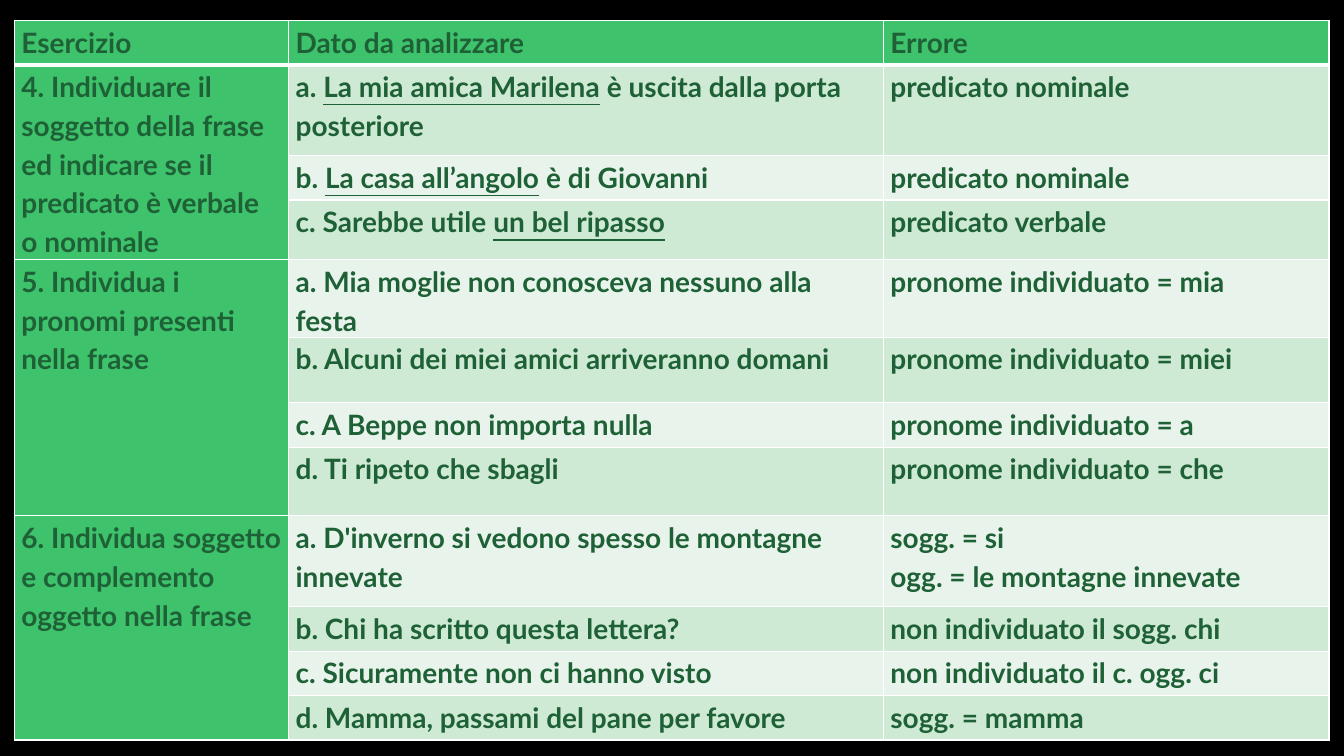
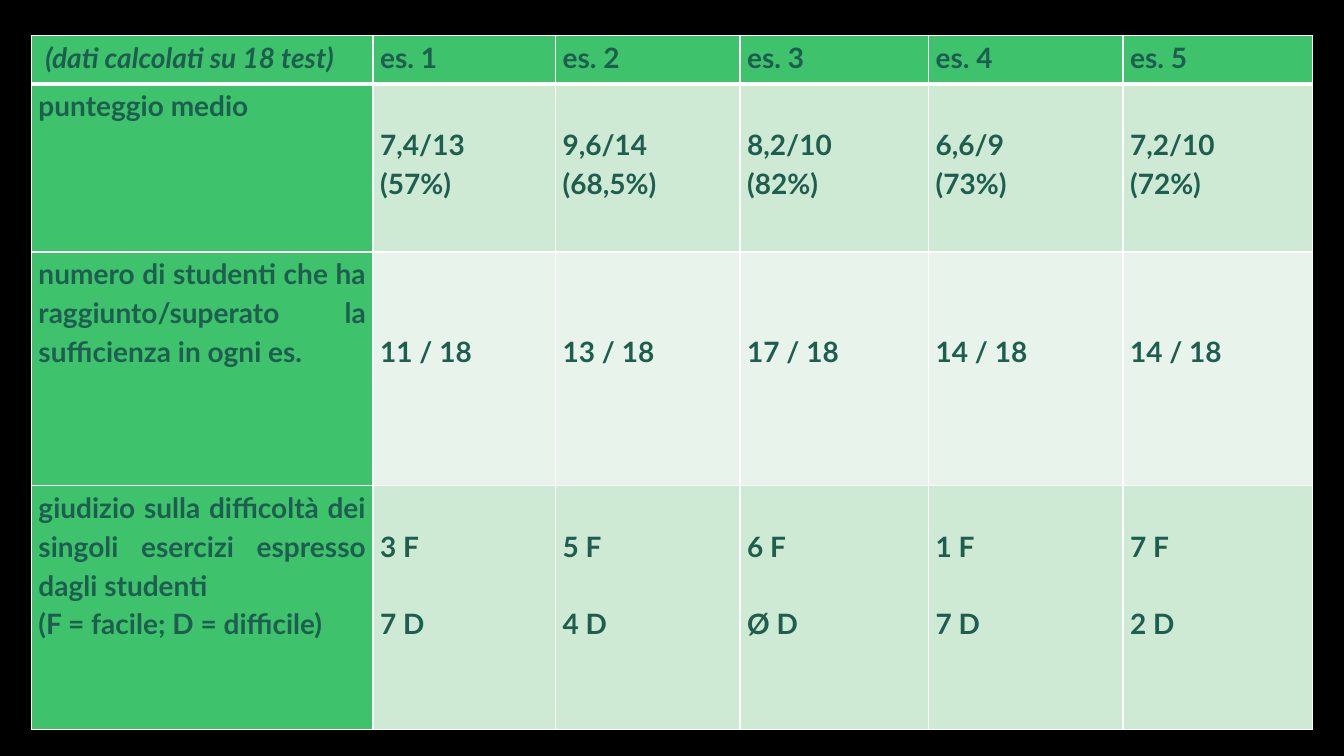
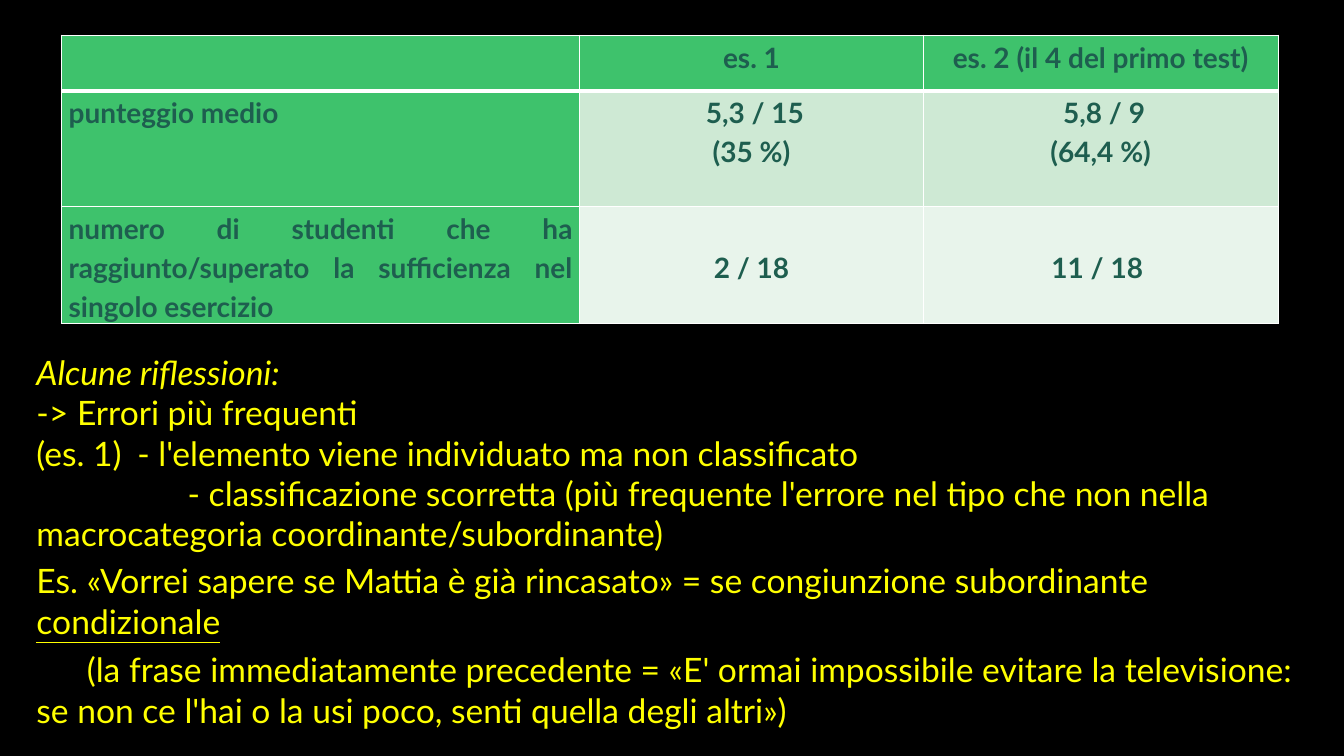
from pptx import Presentation
from pptx.dml.color import RGBColor
from pptx.enum.text import PP_ALIGN
from pptx.oxml.ns import qn
from pptx.util import Cm, Pt
from lxml.etree import SubElement, Element

# Shared style
FONT = "Lato"
BLACK, WHITE, YELLOW = "000000", "FFFFFF", "FFFF00"
HEADER_GREEN, BANDS = "3EC26C", ("E8F4EB", "CEE9D4")
FOREST, TEAL = "1F6136", "1E5E4F"
TEXT_LINE = Cm(0.975)  # height of one table text line
LEFT, JUSTIFY, CENTER = PP_ALIGN.LEFT, PP_ALIGN.JUSTIFY, PP_ALIGN.CENTER

# Content: _underlined_, *italic*; heights and widths in cm
ERROR_HEADER = ["Esercizio", "Dato da analizzare", "Errore"]
ERROR_GROUPS = [
    ("4. Individuare il soggetto della frase ed indicare se il predicato è verbale o nominale", [
        (2.29, "a. _La mia amica Marilena_ è uscita dalla porta posteriore", "predicato nominale"),
        (1.12, "b. _La casa all’angolo_ è di Giovanni", "predicato nominale"),
        (1.5, "c. Sarebbe utile _un bel ripasso_", "predicato verbale"),
    ]),
    ("5. Individua i pronomi presenti nella frase", [
        (1.95, "a. Mia moglie non conosceva nessuno alla festa", "pronome individuato = mia"),
        (1.65, "b. Alcuni dei miei amici arriveranno domani", "pronome individuato = miei"),
        (1.12, "c. A Beppe non importa nulla", "pronome individuato = a"),
        (1.73, "d. Ti ripeto che sbagli", "pronome individuato = che"),
    ]),
    ("6. Individua soggetto e complemento oggetto nella frase", [
        (2.29, "a. D'inverno si vedono spesso le montagne innevate",
         "sogg. = si\nogg. = le montagne innevate"),
        (1.12, "b. Chi ha scritto questa lettera?", "non individuato il sogg. chi"),
        (1.12, "c. Sicuramente non ci hanno visto", "non individuato il c. ogg. ci"),
        (1.12, "d. Mamma, passami del pane per favore", "sogg. = mamma"),
    ]),
]

# Rows: height, lines left free above the values, lines between values, texts
FIRST_TEST = [
    (1.22, 0, 0, [" *(dati calcolati su 18 test)*", "es. 1", "es. 2", "es. 3", "es. 4", "es. 5"]),
    (4.24, 1, 0, ["punteggio medio", "7,4/13\n(57%)", "9,6/14\n(68,5%)", "8,2/10\n(82%)",
                  "6,6/9\n(73%)", "7,2/10\n(72%)"]),
    (5.89, 2, 0, ["numero di studenti che ha raggiunto/superato la sufficienza in ogni es.",
                  "11 / 18", "13 / 18", "17 / 18", "14 / 18", "14 / 18"]),
    (6.15, 1, 1, ["giudizio sulla difficoltà dei singoli esercizi espresso dagli studenti\n"
                  "(F = facile; D = difficile)",
                  "3 F\n7 D", "5 F\n4 D", "6 F\nØ D", "1 F\n7 D", "7 F\n2 D"]),
]
SECOND_TEST = [
    (1.4, 0, 0, ["", "es. 1", "es. 2 (il 4 del primo test)"]),
    (2.92, 0, 0, ["punteggio medio", " 5,3 / 15\n(35 %)", " 5,8 / 9\n(64,4 %)"]),
    (2.92, 1, 0, ["numero di studenti che ha raggiunto/superato la sufficienza nel singolo esercizio",
                  "2 / 18", "11 / 18 "]),
]

# Paragraphs: text, first-line indent, tab stop, space before, space after
REFLECTIONS = [
    ("*Alcune riflessioni:*", 0, 0, 0, 0),
    ("-> Errori più frequenti", 0, 0, 0, 0),
    ("(es. 1)\t- l'elemento viene individuato ma non classificato", 0, 3.81, 0, 0),
    ("- classificazione scorretta (più frequente l'errore nel tipo che non nella "
     "macrocategoria coordinante/subordinante)", 3.81, 0, 0, 0),
    ("Es.\t«Vorrei sapere se Mattia è già rincasato» = se congiunzione subordinante "
     "_condizionale_", 0, 1.27, 4.8, 6),
    ("(la frase immediatamente precedente = «E' ormai impossibile evitare la televisione:",
     1.27, 0, 0, 0),
    ("se non ce l'hai o la usi poco, senti quella degli altri»)", 0, 0, 0, 0),
]


def rgb(value):
    return RGBColor.from_string(value)


def add_marked_runs(paragraph, text):
    """Split the text at its marks and add one run for each piece."""
    mark = "_" if "_" in text else "*"
    for index, piece in enumerate(text.split(mark)):
        if piece:
            run = paragraph.add_run()
            run.text = piece
            if index % 2 and mark == "_":
                run.font.underline = True
            elif index % 2:
                run.font.italic = True


def set_font(paragraph, size, color, bold=False):
    font = paragraph.font
    font.name, font.size, font.bold = FONT, Pt(size), bold
    font.color.rgb = rgb(color)


def set_borders(cell, top, bottom):
    properties = cell._tc.get_or_add_tcPr()
    sides = (("lnL", 1), ("lnR", 1), ("lnT", top), ("lnB", bottom))
    for index, (side, width) in enumerate(sides):
        line = Element(qn("a:" + side), w=str(Pt(width)))
        fill = SubElement(line, qn("a:solidFill"))
        SubElement(fill, qn("a:srgbClr"), val=WHITE)
        properties.insert(index, line)


def fill_cell(cell, text, color, alignment, lead, gap):
    cell.margin_left = cell.margin_right = Cm(0.18)
    cell.margin_top, cell.margin_bottom = int(lead * TEXT_LINE), 0
    for index, line in enumerate(text.split("\n")):
        frame = cell.text_frame
        paragraph = frame.add_paragraph() if index else frame.paragraphs[0]
        paragraph.alignment = alignment
        paragraph.line_spacing = 1.15
        if index and gap:
            paragraph.space_before = int(gap * TEXT_LINE)
        add_marked_runs(paragraph, line)
        set_font(paragraph, 20, color, bold=True)


def add_green_table(slide, left, top, widths, rows, color, label_align, value_align):
    heights = [row[0] for row in rows]
    table = slide.shapes.add_table(len(rows), len(widths), Cm(left), Cm(top),
                                   Cm(sum(widths)), Cm(sum(heights))).table
    for column, width in zip(table.columns, widths):
        column.width = Cm(width)
    for row_index, (height, lead, gap, texts) in enumerate(rows):
        table.rows[row_index].height = Cm(height)
        for column_index, text in enumerate(texts):
            cell = table.cell(row_index, column_index)
            is_label = column_index == 0
            if text is not None:
                fill_cell(cell, text, color, label_align if is_label else value_align,
                          0 if is_label else lead, 0 if is_label else gap)
            cell.fill.solid()
            on_green = is_label or row_index == 0
            cell.fill.fore_color.rgb = rgb(HEADER_GREEN if on_green else BANDS[row_index % 2])
            set_borders(cell, 3 if row_index == 1 else 1, 3 if row_index == 0 else 1)
    return table


def add_black_slide(presentation):
    slide = presentation.slides.add_slide(presentation.slide_layouts[6])
    slide.background.fill.solid()
    slide.background.fill.fore_color.rgb = rgb(BLACK)
    return slide


def add_error_slide(presentation):
    rows = [(1.12, 0, 0, ERROR_HEADER)]
    for label, items in ERROR_GROUPS:
        for index, (height, sentence, error) in enumerate(items):
            rows.append((height, 0, 0, [None if index else label, sentence, error]))
    table = add_green_table(add_black_slide(presentation), 0.36, 0.51, [6.91, 14.99, 11.23],
                            rows, FOREST, LEFT, LEFT)
    # Each exercise label spans its sentences
    first = 1
    for _, items in ERROR_GROUPS:
        last = first + len(items) - 1
        table.cell(first, 0).merge(table.cell(last, 0))
        first = last + 1


def add_reflections(slide):
    frame = slide.shapes.add_textbox(Cm(0.56), Cm(8.74), Cm(32.51), Cm(9.4)).text_frame
    frame.word_wrap = True
    frame.margin_left = Cm(0.36)
    for index, (text, indent, tab, before, after) in enumerate(REFLECTIONS):
        paragraph = frame.add_paragraph() if index else frame.paragraphs[0]
        paragraph.space_before, paragraph.space_after = Pt(before), Pt(after)
        properties = paragraph._p.get_or_add_pPr()
        properties.set("indent", str(Cm(indent)))
        if tab:
            stops = SubElement(properties, qn("a:tabLst"))
            SubElement(stops, qn("a:tab"), pos=str(Cm(tab)), algn="l")
        add_marked_runs(paragraph, text)
        set_font(paragraph, 24, YELLOW)


def main():
    presentation = Presentation()
    presentation.slide_width, presentation.slide_height = Cm(33.87), Cm(19.05)

    add_error_slide(presentation)
    add_green_table(add_black_slide(presentation), 0.79, 0.89,
                    [8.61, 4.6, 4.65, 4.75, 4.9, 4.78], FIRST_TEST, TEAL, JUSTIFY, JUSTIFY)
    second_test_slide = add_black_slide(presentation)
    add_green_table(second_test_slide, 1.55, 0.89, [13.06, 8.66, 8.94],
                    SECOND_TEST, TEAL, JUSTIFY, CENTER)
    add_reflections(second_test_slide)

    presentation.save("out.pptx")


if __name__ == "__main__":
    main()
